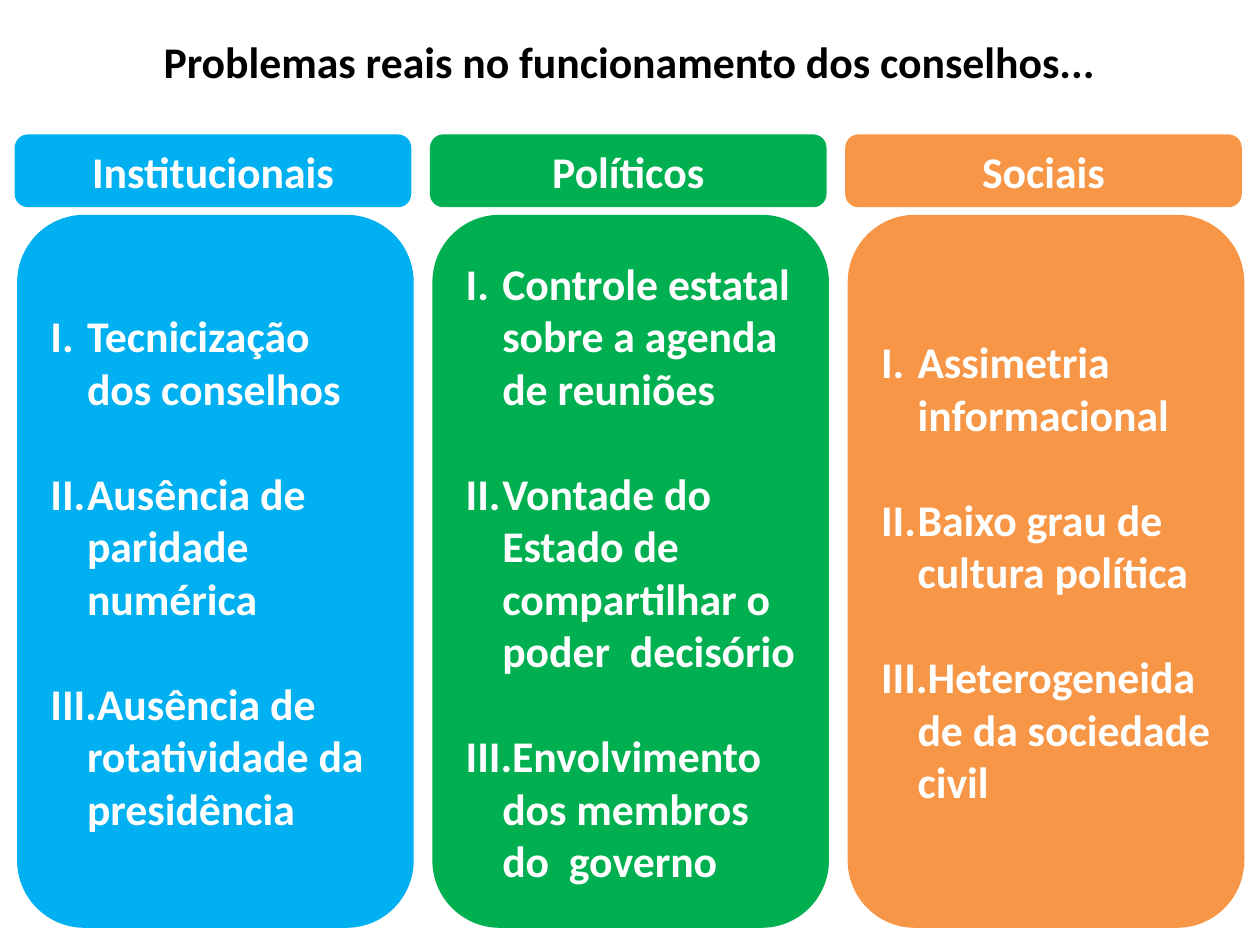
from pptx import Presentation
from pptx.dml.color import RGBColor
from pptx.enum import shapes, text
from pptx.oxml import ns
from pptx.util import Pt
from lxml import etree

COLORS = {
    "blue": "00B0F0",
    "green": "00B050",
    "orange": "F79646",
    "white": "FFFFFF",
    "black": "000000",
}
COLUMNS = [
    ("Institucionais", "blue", [
        "Tecnicização dos conselhos",
        "Ausência de paridade numérica",
        "Ausência de rotatividade da presidência",
    ]),
    ("Políticos", "green", [
        "Controle estatal sobre a agenda de reuniões",
        "Vontade do Estado de compartilhar o poder  decisório",
        "Envolvimento dos membros do  governo",
    ]),
    ("Sociais", "orange", [
        "Assimetria informacional",
        "Baixo grau de cultura política",
        "Heterogeneidade da sociedade civil",
    ]),
]


class SlideBuilder:
    font = "Calibri"
    size = 25
    item_gap = 30
    indent = 20.9

    def __init__(self, slide):
        self.slide = slide

    def add_wording(self, paragraph, wording, color, align):
        paragraph.alignment = align
        run = paragraph.add_run()
        run.text = wording
        run.font.name = self.font
        run.font.size = Pt(self.size)
        run.font.bold = True
        run.font.color.rgb = RGBColor.from_string(COLORS[color])

    def title(self, wording, left, top, width, height):
        box = self.slide.shapes.add_textbox(Pt(left), Pt(top), Pt(width), Pt(height))
        box.text_frame.word_wrap = True
        self.add_wording(box.text_frame.paragraphs[0], wording, "black", text.PP_ALIGN.CENTER)

    def panel(self, color, left, top, width, height):
        panel = self.slide.shapes.add_shape(
            shapes.MSO_SHAPE.ROUNDED_RECTANGLE, Pt(left), Pt(top), Pt(width), Pt(height))
        panel.shadow.inherit = False
        fill = RGBColor.from_string(COLORS[color])
        panel.fill.solid()
        panel.fill.fore_color.rgb = fill
        panel.line.color.rgb = fill
        panel.line.width = Pt(2)
        frame = panel.text_frame
        frame.word_wrap = True
        frame.vertical_anchor = text.MSO_ANCHOR.MIDDLE
        return frame

    def heading(self, wording, color, *place):
        frame = self.panel(color, *place)
        self.add_wording(frame.paragraphs[0], wording, "white", text.PP_ALIGN.CENTER)

    def numbered_list(self, problems, color, *place):
        frame = self.panel(color, *place)
        for index, problem in enumerate(problems):
            paragraph = frame.add_paragraph() if index else frame.paragraphs[0]
            self.add_wording(paragraph, problem, "white", text.PP_ALIGN.LEFT)
            if index:
                paragraph.space_before = Pt(self.item_gap)
            properties = paragraph._p.get_or_add_pPr()
            properties.set("marL", str(Pt(self.indent)))
            properties.set("indent", str(-Pt(self.indent)))
            numbering = etree.SubElement(properties, ns.qn("a:buAutoNum"))
            numbering.set("type", "romanUcPeriod")


def main():
    deck = Presentation()
    deck.slide_width, deck.slide_height = Pt(720), Pt(540)
    builder = SlideBuilder(deck.slides.add_slide(deck.slide_layouts[6]))
    builder.title("Problemas reais no funcionamento dos conselhos...", 16.5, 16.5, 686, 45.4)
    pitch, width = 237.3, 224.6
    for column, (heading, color, problems) in enumerate(COLUMNS):
        left = 10.8 + column * pitch
        builder.numbered_list(problems, color, left, 123.8, width, 405.4)
        builder.heading(heading, color, left - 1.4, 77.8, width, 39.6)
    deck.save("out.pptx")


if __name__ == "__main__":
    main()
